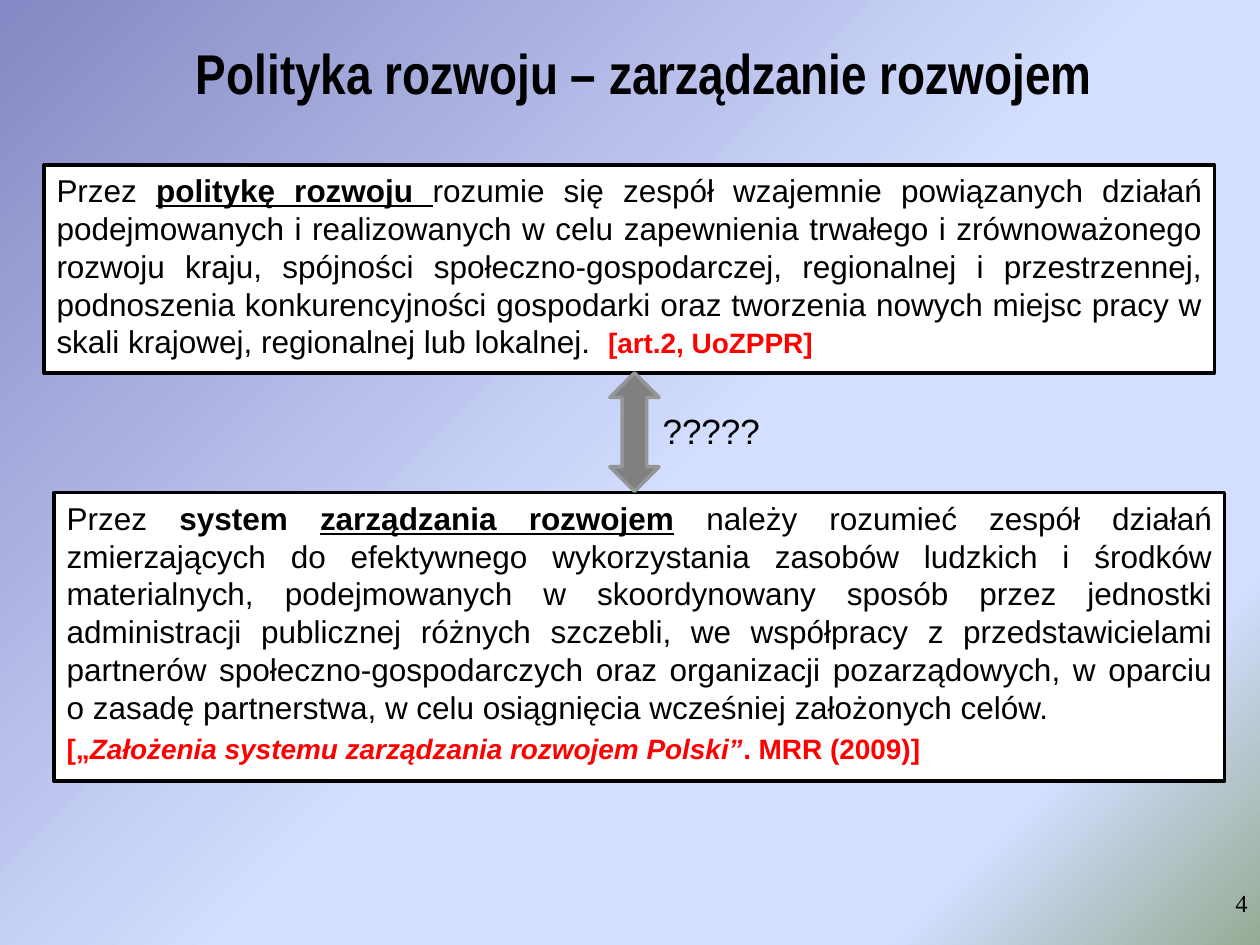
from lxml import etree
from pptx import Presentation
from pptx.dml.color import RGBColor
from pptx.enum.shapes import MSO_SHAPE
from pptx.enum.text import MSO_ANCHOR, MSO_AUTO_SIZE, PP_ALIGN
from pptx.oxml.ns import qn
from pptx.util import Inches, Pt

RECTANGLE, DOUBLE_ARROW = MSO_SHAPE.RECTANGLE, MSO_SHAPE.UP_DOWN_ARROW
TOP, BOTTOM = MSO_ANCHOR.TOP, MSO_ANCHOR.BOTTOM
CENTER, RIGHT, JUSTIFY = PP_ALIGN.CENTER, PP_ALIGN.RIGHT, PP_ALIGN.JUSTIFY
GROW = MSO_AUTO_SIZE.SHAPE_TO_FIT_TEXT
BACKGROUND_STOPS = [(0, "8488C4"), (53, "D4DEFF"), (83, "D4DEFF"), (100, "96AB94")]
BOLD = {"bold": True}
BOLD_UNDERLINED = {"bold": True, "underline": True}
SOURCE = {"bold": True, "size": 16, "color": "FF0000"}


def add_shape(preset, left, top, width, height, fill, line):
    shape = slide.shapes.add_shape(
        preset, Inches(left), Inches(top), Inches(width), Inches(height))
    shape.shadow.inherit = False
    shape.fill.solid()
    shape.fill.fore_color.rgb = RGBColor.from_string(fill)
    shape.line.color.rgb = RGBColor.from_string(line)
    shape.line.width = Pt(2)
    return shape


def write(shape, paragraphs, size=18, font="Arial", align=JUSTIFY, anchor=TOP,
          wrap=True, grow=False, before=0, line_spacing=None):
    """Fill a shape with paragraphs, each a list of (text, run format) pairs."""
    frame = shape.text_frame
    frame.word_wrap = wrap
    frame.vertical_anchor = anchor
    if grow:
        frame.auto_size = GROW
    for index, runs in enumerate(paragraphs):
        paragraph = frame.add_paragraph() if index else frame.paragraphs[0]
        paragraph.alignment = align
        paragraph.space_before = Pt(before)
        if line_spacing:
            paragraph.line_spacing = line_spacing
        for text, style in runs:
            run = paragraph.add_run()
            run.text = text
            run.font.name = font
            run.font.size = Pt(style.get("size", size))
            run.font.bold = style.get("bold", False)
            run.font.italic = style.get("italic", False)
            run.font.underline = style.get("underline", False)
            run.font.color.rgb = RGBColor.from_string(style.get("color", "000000"))


presentation = Presentation()
presentation.slide_width, presentation.slide_height = Inches(10), Inches(7.5)
slide = presentation.slides.add_slide(presentation.slide_layouts[6])

# Diagonal background gradient
background = slide.background.fill
background.gradient()
background.gradient_angle = 315
stop_list = slide.element.find(".//" + qn("a:gsLst"))
for default_stop in list(stop_list):
    stop_list.remove(default_stop)
for percent, color in BACKGROUND_STOPS:
    stop = etree.SubElement(stop_list, qn("a:gs"), pos=str(percent * 1000))
    etree.SubElement(stop, qn("a:srgbClr"), val=color)

title = slide.shapes.add_textbox(Inches(0.51), Inches(0.13), Inches(9.21), Inches(0.76))
write(title, [[("Polityka rozwoju – zarządzanie rozwojem", BOLD)]], size=32,
      font="Arial Narrow", align=CENTER, anchor=BOTTOM, line_spacing=0.85)

page_number = slide.shapes.add_textbox(Inches(9.17), Inches(7), Inches(0.83), Inches(0.5))
write(page_number, [[("4", {})]], size=14, font="Times New Roman", align=RIGHT)

# The two definitions
policy_definition = [[
    ("Przez ", {}),
    ("politykę rozwoju ", BOLD_UNDERLINED),
    ("rozumie się zespół wzajemnie powiązanych działań podejmowanych i "
     "realizowanych w celu zapewnienia trwałego i zrównoważonego rozwoju kraju, "
     "spójności społeczno-gospodarczej, regionalnej i przestrzennej, podnoszenia "
     "konkurencyjności gospodarki oraz tworzenia nowych miejsc pracy w skali "
     "krajowej, regionalnej lub lokalnej.  ", {}),
    ("[art.2, UoZPPR]", SOURCE),
]]
management_definition = [
    [
        ("Przez ", {}),
        ("system ", BOLD),
        ("zarządzania rozwojem", BOLD_UNDERLINED),
        (" należy rozumieć zespół działań zmierzających do efektywnego "
         "wykorzystania zasobów ludzkich i środków materialnych, podejmowanych w "
         "skoordynowany sposób przez jednostki administracji publicznej różnych "
         "szczebli, we współpracy z przedstawicielami partnerów "
         "społeczno-gospodarczych oraz organizacji pozarządowych, w oparciu o "
         "zasadę partnerstwa, w celu osiągnięcia wcześniej założonych celów. ", {}),
    ],
    [
        ("[„", SOURCE),
        ("Założenia systemu zarządzania rozwojem Polski”", {**SOURCE, "italic": True}),
        (". MRR (2009)]", SOURCE),
    ],
]
for left, top, height, definition in [
    (0.35, 1.31, 1.65, policy_definition),
    (0.43, 3.91, 2.29, management_definition),
]:
    box = add_shape(RECTANGLE, left, top, 9.29, height, "FFFFFF", "000000")
    write(box, definition, grow=True, before=3.6)

# The open question between them
add_shape(DOUBLE_ARROW, 4.84, 2.96, 0.39, 0.94, "808080", "969696")
question = slide.shapes.add_textbox(Inches(5.16), Inches(3.2), Inches(0.98), Inches(0.44))
write(question, [[("?????", {})]], size=20, wrap=False, grow=True, before=4)

presentation.save("out.pptx")
